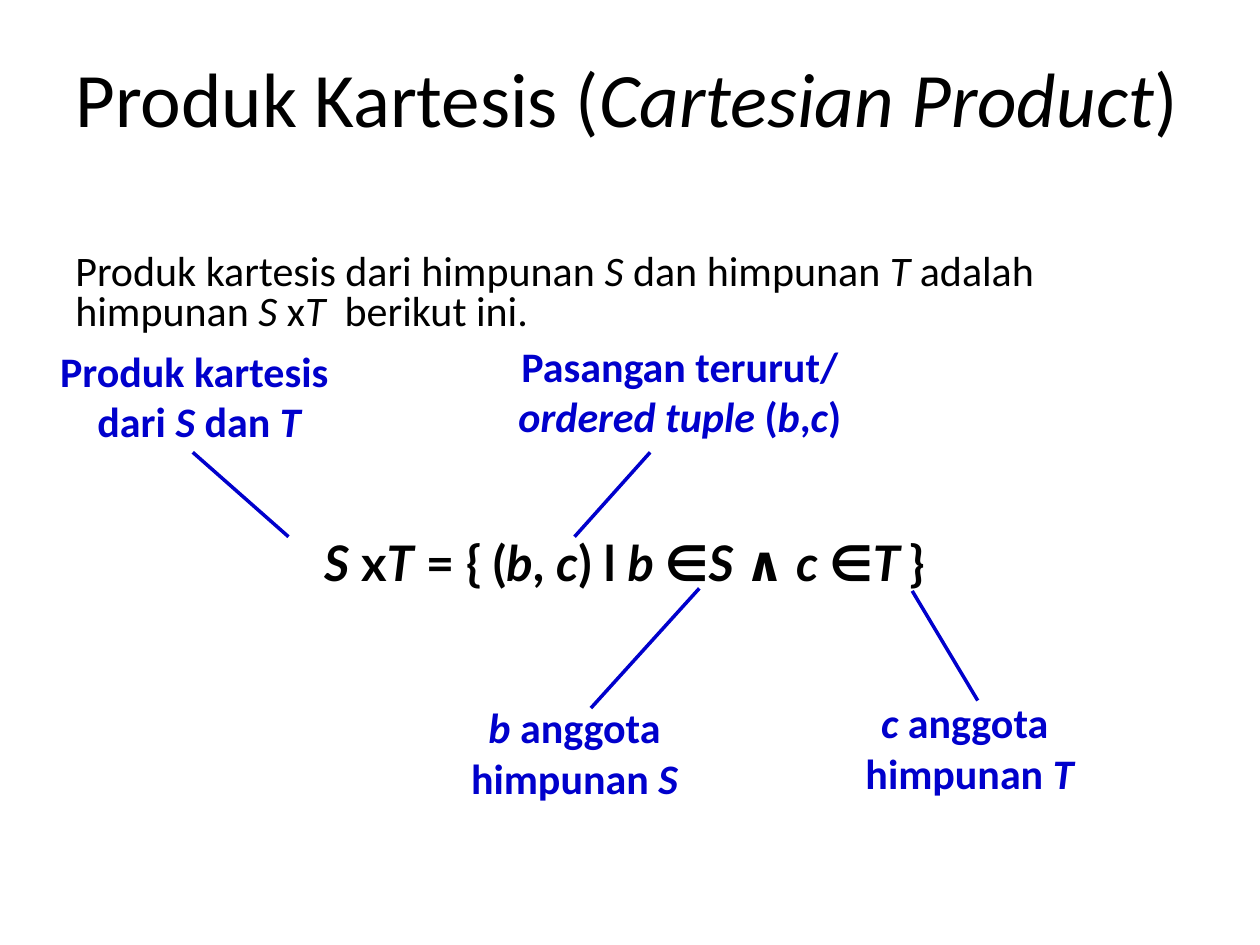
from pptx import Presentation
from pptx.dml.color import RGBColor
from pptx.enum.shapes import MSO_CONNECTOR
from pptx.enum.text import MSO_ANCHOR, PP_ALIGN
from pptx.oxml.ns import qn
from pptx.util import Inches, Pt
from lxml.etree import SubElement

BLACK = "000000"
BLUE = "0000CC"


def color(value):
    return RGBColor.from_string(value)


def add_runs(p, text, size, font, fill, bold):
    """Add runs to a paragraph; parts between asterisks are italic."""
    for i, part in enumerate(text.split("*")):
        if part:
            r = p.add_run()
            r.text = part
            r.font.name = font
            r.font.size = Pt(size)
            r.font.bold = bold
            r.font.italic = i % 2 == 1
            r.font.color.rgb = color(fill)


def add_text(s, box, lines, size, font="Calibri", fill=BLACK, bold=False,
             align=PP_ALIGN.LEFT, anchor=MSO_ANCHOR.TOP, spacing=None,
             wrap=True, inset=True):
    tf = s.shapes.add_textbox(*map(Inches, box)).text_frame
    tf.word_wrap = wrap
    tf.vertical_anchor = anchor
    if not inset:
        tf.margin_left = tf.margin_right = 0
        tf.margin_top = tf.margin_bottom = 0
    for i, line in enumerate(lines):
        p = tf.paragraphs[0] if i == 0 else tf.add_paragraph()
        p.alignment = align
        p.line_spacing = spacing
        add_runs(p, line, size, font, fill, bold)


def add_label(s, box, lines, wrap=True):
    add_text(s, box, lines, 24, fill=BLUE, bold=True,
             align=PP_ALIGN.CENTER, wrap=wrap)


def add_pointer(s, start, end):
    line = s.shapes.add_connector(MSO_CONNECTOR.STRAIGHT,
                                  *map(Inches, start + end))
    line.line.color.rgb = color(BLUE)
    line.line.width = Pt(2)
    SubElement(line._element.spPr, qn("a:effectLst"))


def main():
    prs = Presentation()
    prs.slide_width, prs.slide_height = Inches(10), Inches(7.5)
    s = prs.slides.add_slide(prs.slide_layouts[6])

    # Title and definition
    add_text(s, (0.5, -0.02, 9, 1.57),
             ["Produk Kartesis (*Cartesian Product*)"], 44,
             anchor=MSO_ANCHOR.MIDDLE)
    add_text(s, (0.5, 1.97, 9, 3.16),
             ["Produk kartesis dari himpunan *S *dan himpunan *T *adalah "
              "himpunan *S *x*T*  berikut ini."], 24, spacing=0.8)

    # Pointers from the formula to its labels
    for start, end in [((2.29, 4.26), (1.53, 3.59)),
                       ((4.69, 5.62), (5.55, 4.67)),
                       ((4.56, 4.26), (5.16, 3.59)),
                       ((7.76, 5.56), (7.24, 4.69))]:
        add_pointer(s, start, end)

    # Labels
    add_label(s, (0.18, 2.69, 2.8, 0.9),
              ["Produk kartesis ", "dari *S *dan *T*"], wrap=False)
    add_label(s, (3.43, 5.52, 2.26, 0.9), ["*b* anggota himpunan *S*"])
    add_label(s, (3.82, 2.65, 3.15, 0.9),
              ["Pasangan terurut/ *ordered tuple *(*b*,*c*)"])
    add_label(s, (6.65, 5.48, 2.09, 0.9),
              ["*c *anggota ", "himpunan *T*"], wrap=False)

    # Formula
    add_text(s, (1.61, 4.23, 6.69, 0.47),
             ["*S* x*T* = { (*b*, *c*) l *b *∈*S *∧ *c *∈*T *}"], 28,
             font="Lato", bold=True, align=PP_ALIGN.CENTER, inset=False)

    prs.save("out.pptx")


if __name__ == "__main__":
    main()
